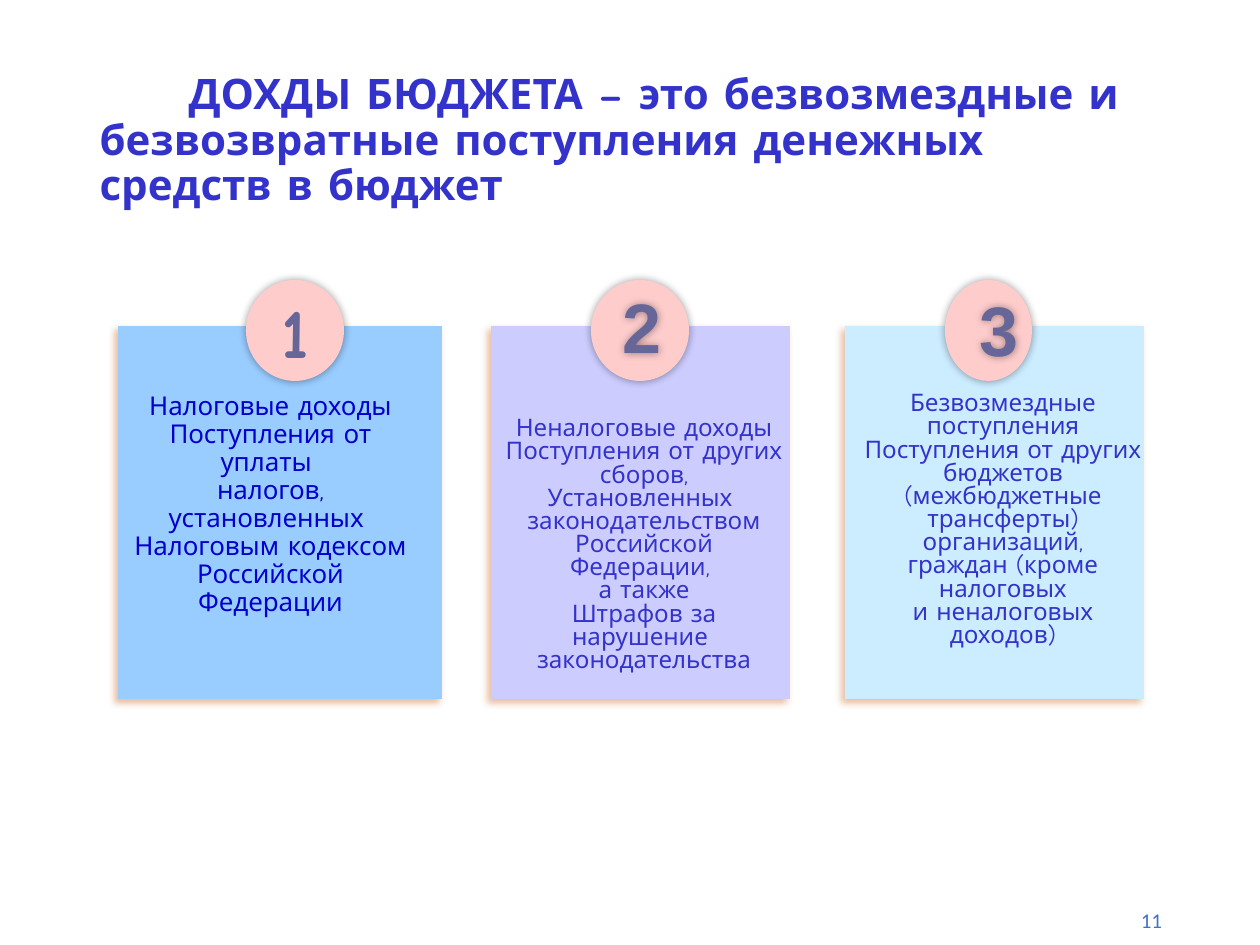
from dataclasses import dataclass

from lxml import etree
from pptx import Presentation
from pptx.dml.color import RGBColor
from pptx.enum.shapes import MSO_SHAPE
from pptx.enum.text import MSO_ANCHOR, MSO_AUTO_SIZE, PP_ALIGN
from pptx.oxml.ns import qn
from pptx.util import Emu, Pt

RECT, OVAL = MSO_SHAPE.RECTANGLE, MSO_SHAPE.OVAL
LEFT, CENTER = PP_ALIGN.LEFT, PP_ALIGN.CENTER
TOP, MIDDLE = MSO_ANCHOR.TOP, MSO_ANCHOR.MIDDLE
NO_FIT = MSO_AUTO_SIZE.NONE
PX_PER_INCH = 126
CARD_TOP, CARD_HEIGHT = 326, 373
BADGE_TOP, BADGE_HEIGHT = 280, 101


@dataclass(frozen=True)
class Theme:
    main_font: str = "Comic Neue"
    digit_font: str = "Arial"
    number_font: str = "Calibri"
    title_size: float = 24
    digit_size: float = 40
    number_size: float = 12
    ink: str = "3333CC"
    tax_ink: str = "0000CC"
    digit: str = "666699"
    number: str = "4472C4"
    badge: str = "FFCCCC"
    # colour, blur pt, distance pt, direction in degrees
    card_shadow: tuple = ("C55A11", 4, 3, 135)
    badge_shadow: tuple = ("000000", 5, 0, 0)


@dataclass(frozen=True)
class Card:
    left: int
    width: int
    fill: str
    badge_left: int
    badge_width: int
    text_box: tuple
    lines: tuple
    digit_box: tuple = ()  # empty: the digit sits inside the badge
    size: float = 13.8
    spacing: float = 0.8
    ink: str = Theme.ink


CARDS = (
    Card(118, 324, "99CCFF", 246, 98, (118, 387, 305, 253),
         ("Налоговые доходы", "Поступления от уплаты ",
          "налогов, установленных ", "Налоговым кодексом",
          "Российской Федерации"),
         size=14.8, spacing=0.9, ink=Theme.tax_ink),
    Card(491, 299, "CCCCFF", 591, 98, (491, 412, 306, 306),
         ("Неналоговые доходы", "Поступления от других сборов,",
          "Установленных ", "законодательством",
          "Российской Федерации, ", "а также",
          "Штрафов за нарушение ", "законодательства"),
         digit_box=(604, 277, 76, 97)),
    Card(845, 299, "CCECFF", 945, 87, (845, 387, 316, 331),
         ("Безвозмездные поступления", "Поступления от других",
          "бюджетов (межбюджетные", "трансферты) организаций,",
          "граждан (кроме налоговых", "и неналоговых доходов)"),
         digit_box=(945, 280, 108, 97)),
)


def px(length):
    return Emu(round(length * 914400 / PX_PER_INCH))


def write_text(shape, lines, *, size, color, font=Theme.main_font, bold=False,
               align=CENTER, anchor=TOP, spacing=1.0, indent=0):
    frame = shape.text_frame
    frame.word_wrap = True
    frame.auto_size = NO_FIT
    frame.vertical_anchor = anchor
    frame.text = "\n".join(lines)
    for paragraph in frame.paragraphs:
        paragraph.alignment = align
        paragraph.line_spacing = spacing
        paragraph.space_before = Pt(0)
        if indent:
            paragraph._p.get_or_add_pPr().set("indent", str(px(indent)))
        for run in paragraph.runs:
            run.font.name = font
            run.font.size = Pt(size)
            run.font.bold = bold
            run.font.color.rgb = RGBColor.from_string(color)


def add_shadow(shape, color, blur, distance, degrees):
    shape.shadow.inherit = False
    effects = shape._element.spPr.find(qn("a:effectLst"))
    outer = etree.SubElement(
        effects, qn("a:outerShdw"), blurRad=str(Pt(blur)),
        dist=str(Pt(distance)), dir=str(degrees * 60000), rotWithShape="0")
    tint = etree.SubElement(outer, qn("a:srgbClr"), val=color)
    etree.SubElement(tint, qn("a:alpha"), val="40000")


def add_panel(slide, kind, box, fill, shadow):
    panel = slide.shapes.add_shape(kind, *map(px, box))
    panel.fill.solid()
    panel.fill.fore_color.rgb = RGBColor.from_string(fill)
    panel.line.fill.background()
    add_shadow(panel, *shadow)
    return panel


def add_label(slide, box, lines, **text_format):
    label = slide.shapes.add_textbox(*map(px, box))
    write_text(label, lines, **text_format)
    return label


def add_title(slide, theme):
    title = slide.shapes.title
    title.left, title.top, title.width, title.height = map(px, (87, 50, 1086, 183))
    write_text(title, ["ДОХДЫ БЮДЖЕТА – это безвозмездные и безвозвратные "
                       "поступления денежных средств в бюджет"],
               size=theme.title_size, color=theme.ink, bold=True,
               align=LEFT, anchor=MIDDLE, spacing=0.9, indent=89)


def add_card(slide, theme, digit, card):
    # Panel and description
    add_panel(slide, RECT, (card.left, CARD_TOP, card.width, CARD_HEIGHT),
              card.fill, theme.card_shadow)
    add_label(slide, card.text_box, card.lines, size=card.size,
              color=card.ink, spacing=card.spacing)

    # Numbered badge
    badge = add_panel(slide, OVAL,
                      (card.badge_left, BADGE_TOP, card.badge_width, BADGE_HEIGHT),
                      theme.badge, theme.badge_shadow)
    digit_format = dict(size=theme.digit_size, color=theme.digit, bold=True)
    if card.digit_box:
        label = add_label(slide, card.digit_box, [digit],
                          font=theme.digit_font, **digit_format)
        add_shadow(label, *theme.badge_shadow)
    else:
        write_text(badge, [digit], anchor=MIDDLE, **digit_format)


def main():
    theme = Theme()
    deck = Presentation()
    deck.slide_width, deck.slide_height = px(1260), px(945)
    slide = deck.slides.add_slide(deck.slide_layouts.get_by_name("Title Only"))

    add_title(slide, theme)
    for position, card in enumerate(CARDS, start=1):
        add_card(slide, theme, str(position), card)

    # Page number
    add_label(slide, (1043, 895, 217, 50), ["11"], size=theme.number_size,
              color=theme.number, font=theme.number_font, anchor=MIDDLE)
    deck.save("out.pptx")


if __name__ == "__main__":
    main()
